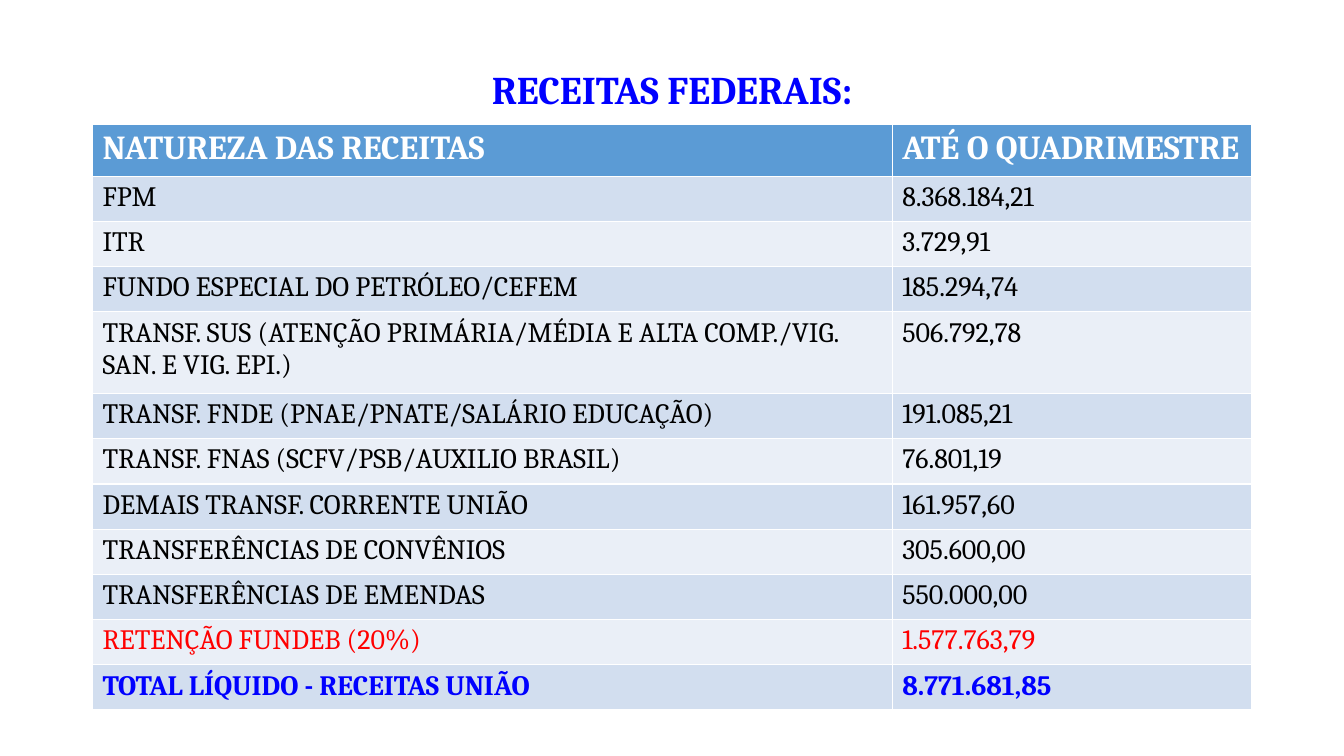
from pptx import Presentation
from pptx.dml.color import RGBColor
from pptx.enum import text
from pptx.util import Cm, Pt

FONT = "Cambria"
BLUE = RGBColor(0x00, 0x00, 0xFF)
RED = RGBColor(0xFF, 0x00, 0x00)
BLACK = RGBColor(0x00, 0x00, 0x00)
WHITE = RGBColor(0xFF, 0xFF, 0xFF)
HEADER_FILL = RGBColor(0x5B, 0x9B, 0xD5)
BAND_FILLS = RGBColor(0xEA, 0xEF, 0xF7), RGBColor(0xD2, 0xDE, 0xEF)

HEADER = ("NATUREZA DAS RECEITAS", "ATÉ O QUADRIMESTRE")
REVENUES = [
    ("FPM", "8.368.184,21"),
    ("ITR", "3.729,91"),
    ("FUNDO ESPECIAL DO PETRÓLEO/CEFEM", "185.294,74"),
    ("TRANSF. SUS (ATENÇÃO PRIMÁRIA/MÉDIA E ALTA COMP./VIG. SAN. E VIG. EPI.)",
     "506.792,78"),
    ("TRANSF. FNDE (PNAE/PNATE/SALÁRIO EDUCAÇÃO)", "191.085,21"),
    ("TRANSF. FNAS (SCFV/PSB/AUXILIO BRASIL)", "76.801,19"),
    ("DEMAIS TRANSF. CORRENTE UNIÃO", "161.957,60"),
    ("TRANSFERÊNCIAS DE CONVÊNIOS", "305.600,00"),
    ("TRANSFERÊNCIAS DE EMENDAS", "550.000,00"),
]
DEDUCTION = ("RETENÇÃO FUNDEB (20%)", "1.577.763,79")
TOTAL = ("TOTAL LÍQUIDO - RECEITAS UNIÃO", "8.771.681,85")

HEADER_HEIGHT, ROW_HEIGHT, TWO_LINE_HEIGHT = Cm(1.31), Cm(1.14), Cm(2.06)
TWO_LINE_ROW = 4
NAME_SHARE = 0.69


def style_paragraph(p, size, color, bold):
    p.font.name = FONT
    p.font.size = Pt(size)
    p.font.color.rgb = color
    p.font.bold = bold


def add_title(slide, left, top, width, height):
    tf = slide.shapes.add_textbox(left, top, width, height).text_frame
    tf.word_wrap = True
    tf.vertical_anchor = text.MSO_ANCHOR.MIDDLE
    p = tf.paragraphs[0]
    p.text = "RECEITAS FEDERAIS:"
    p.alignment = text.PP_ALIGN.CENTER
    p.line_spacing = 0.9
    style_paragraph(p, 28, BLUE, True)


def fill_row(table, row, values, fill, size, color, bold):
    for cell, value in zip(table.rows[row].cells, values):
        cell.fill.solid()
        cell.fill.fore_color.rgb = fill
        p = cell.text_frame.paragraphs[0]
        p.text = value
        style_paragraph(p, size, color, bold)


def add_revenue_table(slide, left, top, width):
    body = [(values, BLACK, False) for values in REVENUES]
    body += [(DEDUCTION, RED, False), (TOTAL, BLUE, True)]
    heights = [HEADER_HEIGHT] + [ROW_HEIGHT] * len(body)
    heights[TWO_LINE_ROW] = TWO_LINE_HEIGHT

    table = slide.shapes.add_table(
        len(heights), len(HEADER), left, top, width, sum(heights)).table
    table.columns[0].width = int(width * NAME_SHARE)
    table.columns[1].width = width - table.columns[0].width
    for row, height in zip(table.rows, heights):
        row.height = height

    fill_row(table, 0, HEADER, HEADER_FILL, 24, WHITE, True)
    for i, (values, color, bold) in enumerate(body, start=1):
        fill_row(table, i, values, BAND_FILLS[i % 2], 20, color, bold)


def main():
    prs = Presentation()
    prs.slide_width, prs.slide_height = Cm(33.87), Cm(19.05)
    slide = prs.slides.add_slide(prs.slide_layouts[6])
    left, width = Cm(2.33), Cm(29.21)
    add_title(slide, left, Cm(1.4), width, Cm(1.85))
    add_revenue_table(slide, left, Cm(3.13), width)
    prs.save("out.pptx")


if __name__ == "__main__":
    main()
